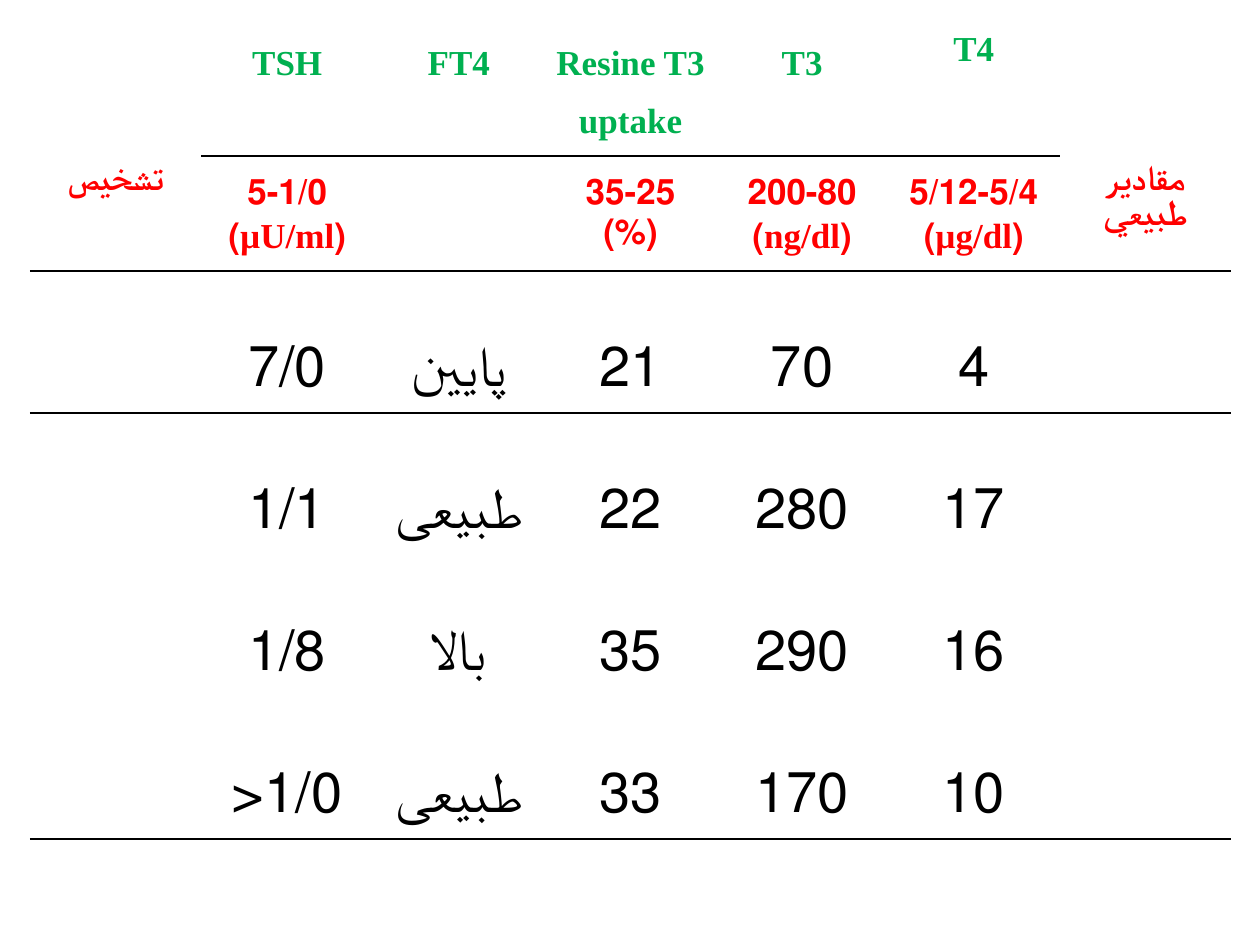
from lxml.etree import SubElement
from pptx import Presentation
from pptx.dml.color import RGBColor
from pptx.enum.text import PP_ALIGN
from pptx.oxml.ns import qn
from pptx.util import Cm, Pt

HEADS = ["", "TSH", "FT4", "Resine T3 uptake", "T3", "T4", ""]
NORMS = ["تشخيص", "5-1/0\n(µU/ml)", "", "35-25\n(%)", "200-80\n(ng/dl)",
         "5/12-5/4\n(µg/dl)", "مقادير طبيعي"]
CASES = [
    ["", "7/0", "پايين", "21", "70", "4", ""],
    ["", "1/1", "طبيعی", "22", "280", "17", ""],
    ["", "1/8", "بالا", "35", "290", "16", ""],
    ["", "1/0<", "طبيعی", "33", "170", "10", ""],
]
ROWS = [HEADS, NORMS, *CASES]
HIGHS = [2.39, 1.57, 2.29, 2.46, 2.44, 2.87]
WIDE = 3.46
LAST = len(HEADS) - 1
NO_STYLE = "{2D5ABB26-0587-4C30-8999-92F81FD0307C}"

GREEN, RED, BLACK = "00B050", "FF0000", "000000"
HEAD = {"name": "Times New Roman", "size": Pt(20), "bold": True}
CASE = {"name": "Calibri", "size": Pt(32), "bold": False}
# Font, colour and line spacing of each row
LOOKS = [(HEAD, GREEN, 1.5), (HEAD, RED, 1.15)] + [(CASE, BLACK, 2.0)] * len(CASES)
INSETS = {"margin_left": Cm(0.18), "margin_right": Cm(0.18),
          "margin_top": Cm(0.3), "margin_bottom": Cm(0.3)}


def paint(color, tint):
    color.rgb = RGBColor.from_string(tint)


def apply(item, values):
    for name, value in values.items():
        setattr(item, name, value)


def add_rule(cell, side):
    """Draw a thin black border on one side, 'lnT' or 'lnB'."""
    line = SubElement(cell._tc.get_or_add_tcPr(), qn(f"a:{side}"), w=str(Pt(1)))
    fill = SubElement(line, qn("a:solidFill"))
    SubElement(fill, qn("a:srgbClr"), val=BLACK)


def has_rule(row, col):
    """Tell whether a rule runs below this cell."""
    return row in (1, len(ROWS) - 1) or (row == 0 and 0 < col < LAST)


def write(cell, text, look, inner, space):
    font, tint, _ = look
    cell.text = text
    for para in cell.text_frame.paragraphs:
        para.alignment = PP_ALIGN.CENTER
        if inner:
            para.line_spacing = space
            para._p.get_or_add_pPr().set("rtl", "1")
        for run in para.runs:
            apply(run.font, font)
            paint(run.font.color, tint)


def fill_cell(cell, row, col):
    look = LOOKS[row]
    text = ROWS[row][col]
    inner = 0 < col < LAST
    if text:
        write(cell, text, look, inner, 1.15 if text == "T4" else look[2])
        if inner:
            apply(cell, INSETS)
    if row and has_rule(row - 1, col):
        add_rule(cell, "lnT")
    if has_rule(row, col):
        add_rule(cell, "lnB")
    cell.fill.background()


def add_grid(slide):
    frame = slide.shapes.add_table(len(ROWS), len(HEADS), Cm(0.6), Cm(0.2),
                                   Cm(WIDE * len(HEADS)), Cm(sum(HIGHS)))
    table = frame.table
    apply(table, {"first_row": False, "horz_banding": False})
    table._tbl.tblPr.find(qn("a:tableStyleId")).text = NO_STYLE
    for column in table.columns:
        column.width = Cm(WIDE)
    for row, high in enumerate(HIGHS):
        table.rows[row].height = Cm(high)
        for col in range(len(HEADS)):
            fill_cell(table.cell(row, col), row, col)


def main():
    deck = Presentation()
    apply(deck, {"slide_width": Cm(25.4), "slide_height": Cm(19.05)})
    add_grid(deck.slides.add_slide(deck.slide_layouts[6]))
    deck.save("out.pptx")


if __name__ == "__main__":
    main()
